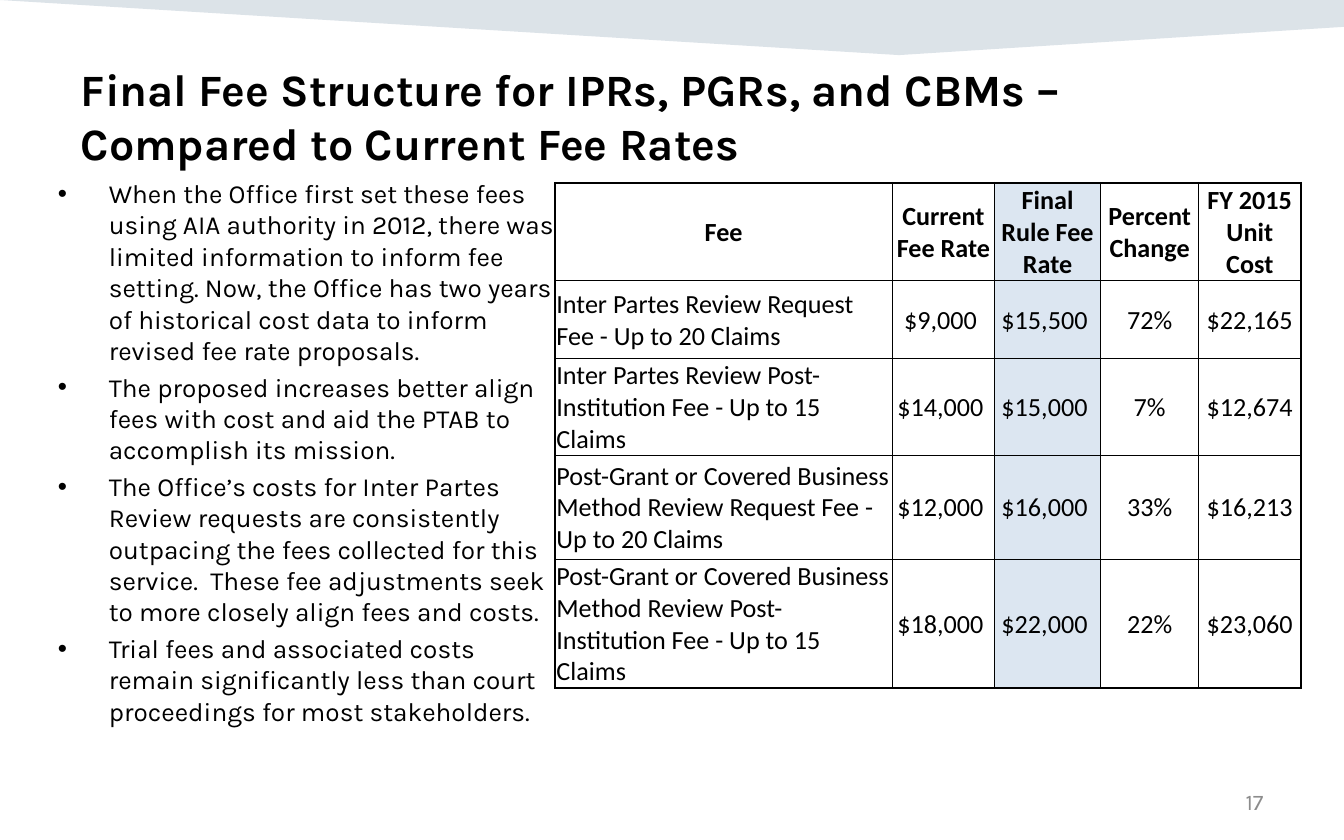
from lxml import etree
from pptx import Presentation
from pptx.dml.color import RGBColor
from pptx.enum.text import MSO_ANCHOR, MSO_AUTO_SIZE, PP_ALIGN
from pptx.oxml.ns import qn
from pptx.util import Pt

PX = 9144
LEFT, CENTER, RIGHT = PP_ALIGN.LEFT, PP_ALIGN.CENTER, PP_ALIGN.RIGHT
TOP, MIDDLE = MSO_ANCHOR.TOP, MSO_ANCHOR.MIDDLE
NO_FIT = MSO_AUTO_SIZE.NONE

COLORS = {
    "ink": "000000",
    "band": "164469",
    "page": "FFFFFF",
    "accent": "DCE6F1",
    "muted": "8C8C8C",
}

TITLE = "Final Fee Structure for IPRs, PGRs, and CBMs – \vCompared to Current Fee Rates"
POINTS = [
    "When the Office first set these fees using AIA authority in 2012, there was limited "
    "information to inform fee setting. Now, the Office has two years of historical cost "
    "data to inform revised fee rate proposals.",
    "The proposed increases better align fees with cost and aid the PTAB to accomplish its mission.",
    "The Office’s costs for Inter Partes Review requests are consistently outpacing the fees "
    "collected for this service.  These fee adjustments seek to more closely align fees and costs.",
    "Trial fees and associated costs remain significantly less than court proceedings "
    "for most stakeholders.",
]
FEES = [
    ("Fee", "Current Fee Rate", "Final Rule Fee Rate", "Percent Change", "FY 2015 Unit Cost"),
    ("Inter Partes Review Request Fee - Up to 20 Claims",
     "$9,000 ", "$15,500 ", "72%", "$22,165"),
    ("Inter Partes Review Post-Institution Fee - Up to 15 Claims",
     "$14,000 ", "$15,000 ", "7%", "$12,674"),
    ("Post-Grant or Covered Business Method Review Request Fee - Up to 20 Claims",
     "$12,000 ", "$16,000 ", "33%", "$16,213"),
    ("Post-Grant or Covered Business Method Review Post-Institution Fee - Up to 15 Claims",
     "$18,000 ", "$22,000 ", "22%", "$23,060"),
]
WIDTHS = [251, 76, 79, 73, 76]
HEIGHTS = [73, 58, 72, 77, 96]
FINAL = 2


def rgb(name):
    """Return the named colour."""
    return RGBColor.from_string(COLORS[name])


def scale(box):
    """Turn px lengths into EMU."""
    return [n * PX for n in box]


def place(shape, box):
    """Move a shape to a box."""
    shape.left, shape.top, shape.width, shape.height = scale(box)


def write(frame, *lines, size=14, font="Karla", color="ink", bold=False,
          align=LEFT, anchor=TOP, hang=0):
    """Fill a text frame with formatted paragraphs."""
    frame.word_wrap = True
    frame.vertical_anchor = anchor
    for i, line in enumerate(lines):
        para = frame.add_paragraph() if i else frame.paragraphs[0]
        para.text = line
        para.alignment = align
        if hang:
            props = para._p.get_or_add_pPr()
            props.set("marL", str(hang * PX))
            props.set("indent", str(-hang * PX))
        for run in para.runs:
            run.font.size = Pt(size)
            run.font.name = font
            run.font.bold = bold
            run.font.color.rgb = rgb(color)


def add_band(slide, box):
    """Draw the pale pointed band behind the top of the slide."""
    x, y, w, h = box
    pen = slide.shapes.build_freeform(x, y, scale=PX)
    pen.add_line_segments([(x + w, y), (x + w, y + h // 2), (x + w * 669 // 1000, y + h)])
    band = pen.convert_to_shape()
    band.shadow.inherit = False
    band.fill.solid()
    band.fill.fore_color.rgb = rgb("band")
    band.line.fill.background()
    tint = band.element.spPr.find(qn("a:solidFill"))[0]
    etree.SubElement(tint, qn("a:alpha")).set("val", "15000")
    band.element.getparent().insert(2, band.element)


def add_title(slide, box):
    """Set the slide title."""
    title = slide.shapes.title
    place(title, box)
    title.text_frame.auto_size = NO_FIT
    write(title.text_frame, TITLE, size=24, bold=True)


def add_points(slide, box):
    """Set the bullet list."""
    body = slide.placeholders[1]
    place(body, box)
    body.text_frame.auto_size = NO_FIT
    write(body.text_frame, *POINTS, hang=38)


def add_edges(cell, edges):
    """Rule the four sides of a cell, with widths in points."""
    props = cell._tc.get_or_add_tcPr()
    for i, (side, width) in enumerate(edges.items()):
        line = etree.Element(qn(f"a:ln{side}"), w=str(Pt(width)))
        fill = etree.SubElement(line, qn("a:solidFill"))
        etree.SubElement(fill, qn("a:srgbClr")).set("val", COLORS["ink"])
        props.insert(i, line)


def add_fees(slide, box):
    """Build the fee table."""
    rows, cols = len(FEES), len(WIDTHS)
    table = slide.shapes.add_table(rows, cols, *scale(box)).table
    table.first_row = table.horz_banding = False
    for col, width in zip(table.columns, WIDTHS):
        col.width = width * PX
    for row, height in zip(table.rows, HEIGHTS):
        row.height = height * PX
    for r, fee in enumerate(FEES):
        for c, text in enumerate(fee):
            cell = table.cell(r, c)
            cell.margin_left = cell.margin_right = cell.margin_top = PX
            cell.margin_bottom = 0
            cell.vertical_anchor = MIDDLE
            cell.fill.solid()
            cell.fill.fore_color.rgb = rgb("accent" if c == FINAL else "page")
            write(cell.text_frame, text, font="Calibri", bold=r == 0,
                  align=LEFT if r and c == 0 else CENTER, anchor=None)
            outer = {"L": c == 0, "R": c == cols - 1, "T": r == 0, "B": r == rows - 1}
            add_edges(cell, {side: 1 if out else 0.5 for side, out in outer.items()})


def add_number(slide, box):
    """Write the page number."""
    label = slide.shapes.add_textbox(*scale(box))
    write(label.text_frame, "17", size=12, color="muted", align=RIGHT, anchor=MIDDLE)


def main():
    """Build and save the slide."""
    deck = Presentation()
    deck.slide_width, deck.slide_height = scale((1000, 625))
    slide = deck.slides.add_slide(deck.slide_layouts[1])
    add_band(slide, (0, 0, 1000, 41))
    add_title(slide, (50, 41, 900, 86))
    add_number(slide, (717, 580, 233, 33))
    add_points(slide, (33, 127, 391, 461))
    add_fees(slide, (413, 136, sum(WIDTHS), sum(HEIGHTS)))
    deck.save("out.pptx")


if __name__ == "__main__":
    main()
